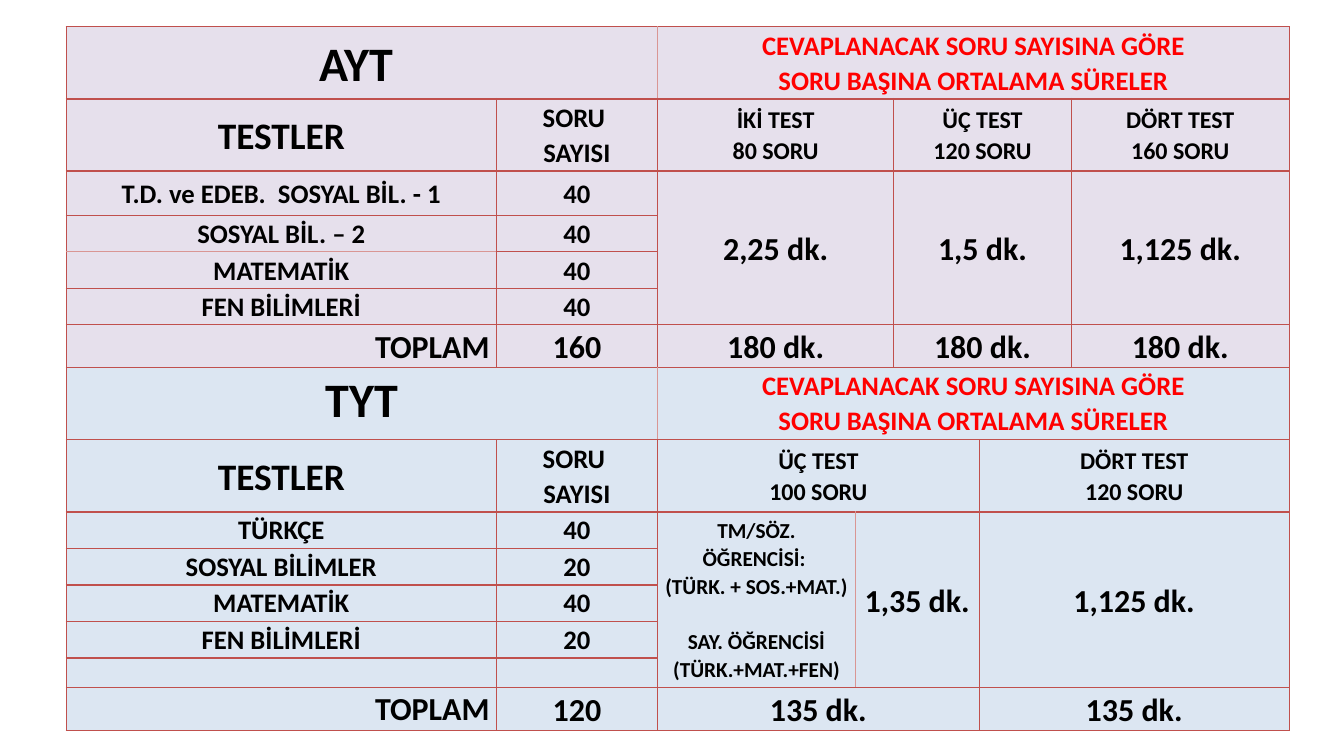
from lxml import etree
from pptx import Presentation
from pptx.dml.color import RGBColor
from pptx.enum.text import MSO_ANCHOR, PP_ALIGN
from pptx.oxml.ns import qn
from pptx.util import Inches, Pt

CENTER, RIGHT = PP_ALIGN.CENTER, PP_ALIGN.RIGHT
TOP, MIDDLE = MSO_ANCHOR.TOP, MSO_ANCHOR.MIDDLE

BLACK, RED = "000000", "FF0000"
LILAC, PALE_BLUE = "E6E0EC", "DCE6F2"
LINE, LIGHT_LINE = "C0504D", "D99694"

COLUMN_WIDTHS = [4.48, 1.68, 2.06, 0.4, 0.89, 0.96, 2.27]
AYT_HEIGHTS = [0.75, 0.75, 0.46, 0.38, 0.38, 0.38, 0.45]
TYT_HEIGHTS = [0.75, 0.75, 0.38, 0.38, 0.38, 0.38, 0.31, 0.45]
TYT_ROW = len(AYT_HEIGHTS)
TITLE_ROWS = (0, TYT_ROW)
ADVICE_ROWS = range(TYT_ROW + 2, TYT_ROW + 7)

AYT_TESTS = [("T.D. ve EDEB.  SOSYAL BİL. - 1", "40"), ("SOSYAL BİL. – 2", "40"),
             ("MATEMATİK", "40"), ("FEN BİLİMLERİ", "40")]
TYT_TESTS = [("TÜRKÇE", "40"), ("SOSYAL BİLİMLER", "20"),
             ("MATEMATİK", "40"), ("FEN BİLİMLERİ", "20")]


def color(value):
    return RGBColor.from_string(value)


def border_style(row, column, side):
    """Colour and width in points of one cell edge."""
    boundary = {"L": column, "R": column + 1}.get(side)
    light = ((row in TITLE_ROWS and boundary == 2)
             or (row in ADVICE_ROWS and boundary == 3)
             or (column == 0 and (row, side) in ((3, "B"), (4, "T"))))
    thick = (row, side) in ((0, "B"), (1, "T"))
    return LIGHT_LINE if light else LINE, 2 if thick else 1


def format_cell(cell, row, column, fill):
    properties = cell._tc.get_or_add_tcPr()
    for side in "LRTB":
        line_color, width = border_style(row, column, side)
        line = etree.SubElement(properties, qn(f"a:ln{side}"), w=str(Pt(width)))
        solid = etree.SubElement(line, qn("a:solidFill"))
        etree.SubElement(solid, qn("a:srgbClr"), val=line_color)
    cell.fill.solid()
    cell.fill.fore_color.rgb = color(fill)
    cell.margin_left = cell.margin_right = Inches(0.07)
    cell.margin_top = cell.margin_bottom = 0


def write_cell(table, row, column, text, size, span=(1, 1), text_color=BLACK,
               align=CENTER, anchor=MIDDLE):
    cell = table.cell(row, column)
    if span != (1, 1):
        cell.merge(table.cell(row + span[0] - 1, column + span[1] - 1))
    cell.vertical_anchor = anchor
    cell.text_frame.text = text
    for paragraph in cell.text_frame.paragraphs:
        paragraph.alignment = align
        paragraph.line_spacing = 1.07
        for run in paragraph.runs:
            run.font.name = "Calibri"
            run.font.size = Pt(size)
            run.font.bold = True
            run.font.color.rgb = color(text_color)
    return cell


def write_section(table, top, height, title, tests, groups, total, fill, anchor):
    """Parts shared by both exams; groups are (column, span, heading, time)."""
    for row in range(top, top + height):
        for column in range(len(COLUMN_WIDTHS)):
            format_cell(table.cell(row, column), row, column, fill)

    # Title and column headings
    write_cell(table, top, 0, title, 36, (1, 2), anchor=anchor)
    write_cell(table, top, 2, "CEVAPLANACAK SORU SAYISINA GÖRE\nSORU BAŞINA ORTALAMA SÜRELER",
               20, (1, 5), RED, anchor=anchor)
    write_cell(table, top + 1, 0, "TESTLER", 28)
    write_cell(table, top + 1, 1, "SORU \nSAYISI", 20)

    # Tests and their question counts
    for row, test in enumerate(tests, top + 2):
        for column, text in enumerate(test):
            write_cell(table, row, column, text, 20, anchor=anchor)

    # Totals, with one time for each group of tests
    last = top + height - 1
    write_cell(table, last, 0, "TOPLAM", 24, align=RIGHT, anchor=anchor)
    write_cell(table, last, 1, total, 24)
    for column, span, heading, time in groups:
        write_cell(table, top + 1, column, heading, 18, (1, span))
        write_cell(table, last, column, time, 24, (1, span))


def write_ayt(table):
    groups = [(2, 2, "İKİ TEST\n80 SORU", "180 dk."),
              (4, 2, "ÜÇ TEST\n120 SORU", "180 dk."),
              (6, 1, "DÖRT TEST\n160 SORU", "180 dk.")]
    write_section(table, 0, len(AYT_HEIGHTS), "AYT ", AYT_TESTS, groups, "160",
                  LILAC, MIDDLE)
    for (column, span, _, _), average in zip(groups, ("2,25 dk.", "1,5 dk.", "1,125 dk.")):
        write_cell(table, 2, column, average, 24, (4, span))


def write_tyt(table):
    groups = [(2, 3, "ÜÇ TEST\n100 SORU", "135 dk."),
              (5, 2, "DÖRT TEST\n120 SORU", "135 dk.")]
    write_section(table, TYT_ROW, len(TYT_HEIGHTS), "TYT", TYT_TESTS, groups, "120",
                  PALE_BLUE, TOP)
    row, span = ADVICE_ROWS[0], len(ADVICE_ROWS)
    advice = write_cell(table, row, 2, "TM/SÖZ. ÖĞRENCİSİ: \n(TÜRK. + SOS.+MAT.)\n"
                        "SAY. ÖĞRENCİSİ\n(TÜRK.+MAT.+FEN)", 16, (span, 1))
    advice.text_frame.paragraphs[2].space_before = Pt(21)
    write_cell(table, row, 3, "1,35 dk.", 24, (span, 2))
    write_cell(table, row, 5, "1,125 dk.", 24, (span, 2))


def add_exam_table(slide, left, top, width, height):
    heights = AYT_HEIGHTS + TYT_HEIGHTS
    table = slide.shapes.add_table(len(heights), len(COLUMN_WIDTHS), Inches(left),
                                   Inches(top), Inches(width), Inches(height)).table
    table.first_row = table.horz_banding = False
    for column, column_width in zip(table.columns, COLUMN_WIDTHS):
        column.width = Inches(column_width)
    for row, row_height in zip(table.rows, heights):
        row.height = Inches(row_height)
    write_ayt(table)
    write_tyt(table)


def main():
    presentation = Presentation()
    presentation.slide_width = Inches(14)
    presentation.slide_height = Inches(7.87)
    slide = presentation.slides.add_slide(presentation.slide_layouts[6])
    add_exam_table(slide, 0.69, 0.28, 12.73, 7.32)
    presentation.save("out.pptx")


if __name__ == "__main__":
    main()
